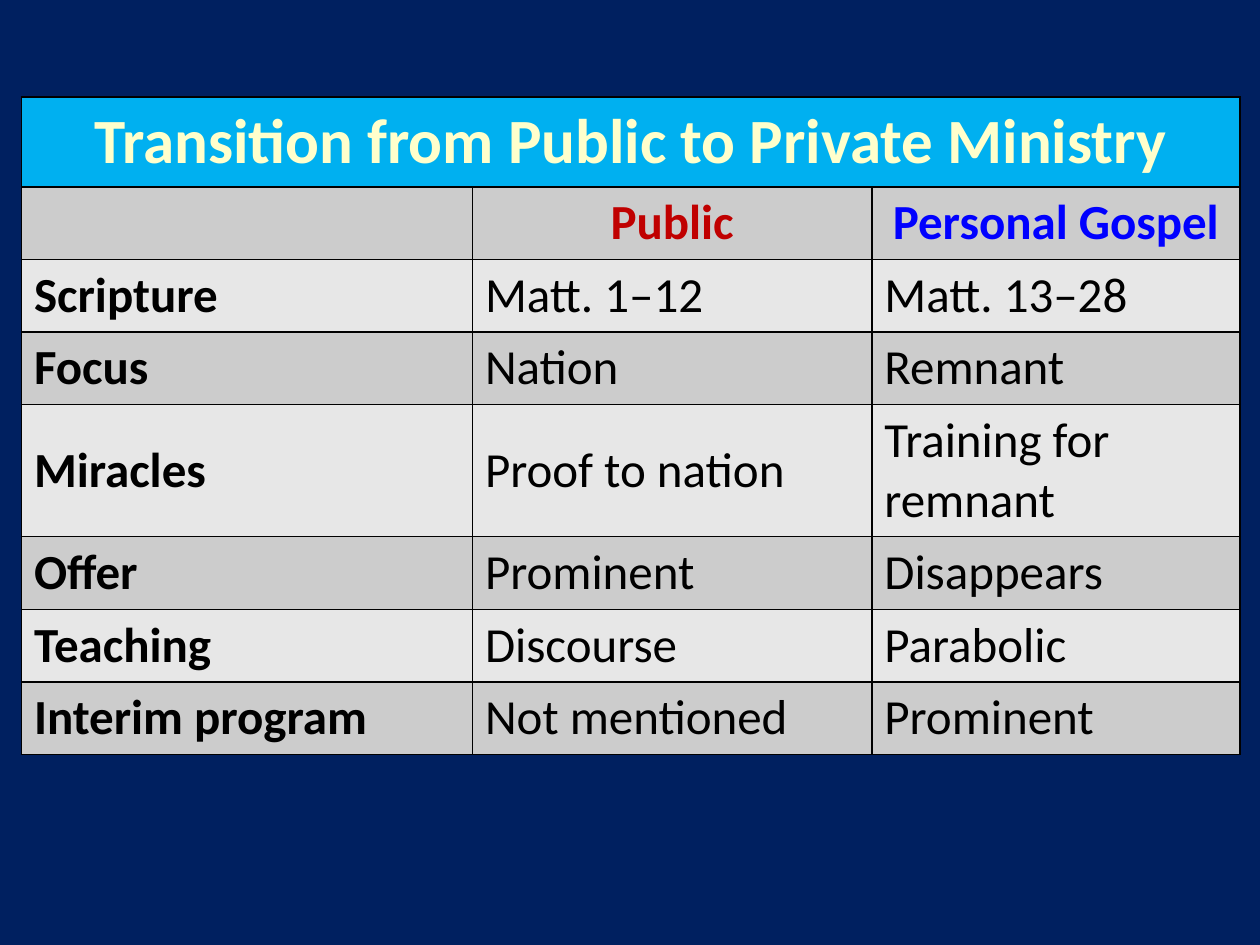
"""Build a slide with a table on the shift from public to private ministry."""
from lxml.etree import SubElement as Sub
from pptx import Presentation
from pptx.dml.color import RGBColor as RGB
from pptx.enum.text import MSO_ANCHOR as Anchor, PP_ALIGN as Align
from pptx.oxml.ns import qn
from pptx.util import Inches, Pt

HUES = {
    "back": "002060", "title": "00B0F0", "cream": "FFFFCC", "dark": "CCCCCC",
    "light": "E7E7E7", "red": "C00000", "blue": "0000FF", "black": "000000",
}
WIDTHS = [3.58, 3.17, 2.92]
ROWS = [
    ["Transition from Public to Private Ministry", "", ""],
    ["", "Public", "Personal Gospel"],
    ["Scripture", "Matt. 1–12", "Matt. 13–28"],
    ["Focus", "Nation", "Remnant"],
    ["Miracles", "Proof to nation", "Training for remnant"],
    ["Offer", "Prominent", "Disappears"],
    ["Teaching", "Discourse", "Parabolic"],
    ["Interim program", "Not mentioned", "Prominent"],
]
HEIGHTS = [0.48, 0.48, 0.48, 0.46, 0.75, 0.48, 0.48, 0.48]


def add_lines(cell):
    props = cell._tc.get_or_add_tcPr()
    for side in ("lnL", "lnR", "lnT", "lnB"):
        line = Sub(props, qn(f"a:{side}"), w=str(Pt(1)))
        Sub(Sub(line, qn("a:solidFill")), qn("a:srgbClr"), val=HUES["black"])


def add_text(cell, text, size, hue, bold, align):
    para = cell.text_frame.paragraphs[0]
    para.alignment = align
    run = para.add_run()
    run.text = text
    font = run.font
    font.name, font.size, font.bold = "Calibri", Pt(size), bold
    font.color.rgb = RGB.from_string(HUES[hue])


deck = Presentation()
deck.slide_width, deck.slide_height = Inches(10), Inches(7.5)
slide = deck.slides.add_slide(deck.slide_layouts[6])
slide.background.fill.solid()
slide.background.fill.fore_color.rgb = RGB.from_string(HUES["back"])

frame = slide.shapes.add_table(
    len(ROWS), len(WIDTHS), Inches(0.17), Inches(0.77), Inches(9.67), Inches(5.13))
table = frame.table
table.first_row = table.horz_banding = False
for col, width in zip(table.columns, WIDTHS):
    col.width = Inches(width)
for row, height in zip(table.rows, HEIGHTS):
    row.height = Inches(height)
table.cell(0, 0).merge(table.cell(0, 2))

for r, words in enumerate(ROWS):
    shade = "title" if r == 0 else "dark" if r % 2 else "light"
    for c, text in enumerate(words):
        cell = table.cell(r, c)
        add_lines(cell)
        cell.fill.solid()
        cell.fill.fore_color.rgb = RGB.from_string(HUES[shade])
        cell.margin_left = cell.margin_right = Inches(0.1)
        cell.margin_top = cell.margin_bottom = Inches(0.05)
        if r > 1:
            cell.vertical_anchor = Anchor.MIDDLE
        if not text:
            continue
        if r == 0:
            add_text(cell, text, 36, "cream", True, Align.CENTER)
        elif r == 1:
            add_text(cell, text, 28, ["black", "red", "blue"][c], True, Align.CENTER)
        else:
            add_text(cell, text, 28, "black", c == 0, Align.LEFT)

deck.save("out.pptx")
